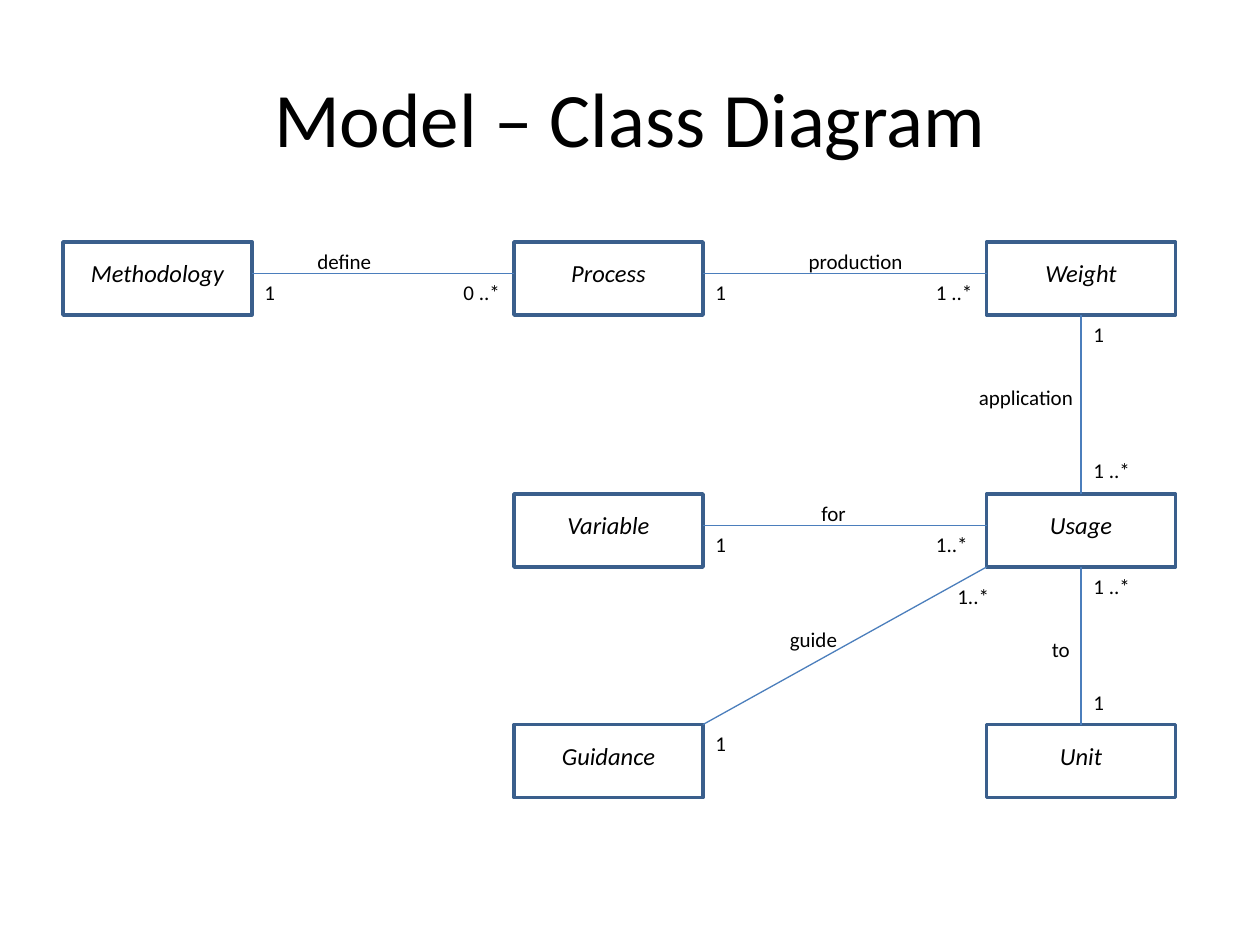
from lxml.etree import SubElement
from pptx import Presentation
from pptx.dml.color import RGBColor
from pptx.enum.shapes import MSO_CONNECTOR as Connector, MSO_SHAPE as Shape
from pptx.enum.text import MSO_ANCHOR as Anchor, MSO_AUTO_SIZE as AutoSize, PP_ALIGN as Align
from pptx.oxml.ns import qn
from pptx.util import Inches, Pt

BLACK = RGBColor(0x00, 0x00, 0x00)
BORDER = RGBColor(0x3A, 0x5F, 0x8C)
LINK = RGBColor(0x4B, 0x7E, 0xBC)

TITLE = "Model – Class Diagram"
COLUMNS = (0.5, 4.08, 7.83)
ROWS = (1.92, 3.92, 5.75)
BOX_WIDTH, BOX_HEIGHT = 1.5, 0.58
NAME_OFFSET, LINK_OFFSET = 0.08, 0.25

CLASSES = {
    "Methodology": (0, 0),
    "Process": (1, 0),
    "Weight": (2, 0),
    "Variable": (1, 1),
    "Usage": (2, 1),
    "Guidance": (1, 2),
    "Unit": (2, 2),
}
ASSOCIATIONS = [
    ("Methodology", "right", "Process", "left"),
    ("Process", "right", "Weight", "left"),
    ("Weight", "bottom", "Usage", "top"),
    ("Variable", "right", "Usage", "left"),
    ("Usage", "bottom", "Unit", "top"),
    ("Guidance", "top right", "Usage", "bottom left"),
]
ANCHORS = {
    "left": (0, LINK_OFFSET),
    "right": (BOX_WIDTH, LINK_OFFSET),
    "top": (BOX_WIDTH / 2, 0),
    "bottom": (BOX_WIDTH / 2, BOX_HEIGHT),
    "top right": (BOX_WIDTH, 0),
    "bottom left": (0, BOX_HEIGHT),
}
LABELS = [
    ("define", 2.42, 1.92, 0.63),
    ("1", 2, 2.17, 0.33),
    ("0 ..*", 3.58, 2.17, 0.5),
    ("production", 6.32, 1.92, 0.96),
    ("1", 5.58, 2.17, 0.33),
    ("1 ..*", 7.33, 2.17, 0.5),
    ("application", 7.67, 3, 0.97),
    ("1", 8.58, 2.5, 0.33),
    ("1 ..*", 8.58, 3.58, 0.5),
    ("for", 6.42, 3.92, 0.42),
    ("1", 5.58, 4.17, 0.33),
    ("1..*", 7.33, 4.17, 0.5),
    ("to", 8.25, 5, 0.42),
    ("1 ..*", 8.58, 4.5, 0.5),
    ("1", 8.58, 5.42, 0.33),
    ("guide", 6.17, 4.92, 0.58),
    ("1", 5.58, 5.75, 0.33),
    ("1..*", 7.5, 4.58, 0.5),
]

TITLE_FONT = {"name": "Calibri", "size": Pt(44)}
CLASS_FONT = {"name": "Calibri", "size": Pt(14), "italic": True}
LABEL_FONT = {"name": "Calibri", "size": Pt(12)}


def add_text(slide, text, left, top, width, height, font, align=Align.LEFT,
             anchor=Anchor.TOP, auto_size=AutoSize.SHAPE_TO_FIT_TEXT):
    box = slide.shapes.add_textbox(*map(Inches, (left, top, width, height)))
    frame = box.text_frame
    frame.word_wrap = True
    frame.auto_size = auto_size
    frame.vertical_anchor = anchor
    paragraph = frame.paragraphs[0]
    paragraph.alignment = align
    run = paragraph.add_run()
    run.text = text
    for name, value in font.items():
        setattr(run.font, name, value)
    run.font.color.rgb = BLACK


def add_class(slide, name, column, row):
    left, top = COLUMNS[column], ROWS[row]
    shape = slide.shapes.add_shape(
        Shape.RECTANGLE, *map(Inches, (left, top, BOX_WIDTH, BOX_HEIGHT)))
    shape.shadow.inherit = False
    shape.fill.background()
    shape.line.color.rgb = BORDER
    shape.line.width = Pt(2)
    add_text(slide, name, left, top + NAME_OFFSET, BOX_WIDTH, 0.34, CLASS_FONT, Align.CENTER)


def anchor_point(name, side):
    column, row = CLASSES[name]
    across, down = ANCHORS[side]
    return Inches(COLUMNS[column] + across), Inches(ROWS[row] + down)


def add_association(slide, source, source_side, target, target_side):
    connector = slide.shapes.add_connector(
        Connector.STRAIGHT, *anchor_point(source, source_side), *anchor_point(target, target_side))
    connector.line.color.rgb = LINK
    connector.line.width = Pt(0.75)
    SubElement(connector._element.spPr, qn("a:effectLst"))


def main():
    presentation = Presentation()
    presentation.slide_width = Inches(10)
    presentation.slide_height = Inches(7.5)
    slide = presentation.slides.add_slide(presentation.slide_layouts[6])
    add_text(slide, TITLE, 0.5, 0.3, 9, 1.25, TITLE_FONT, Align.CENTER,
             Anchor.MIDDLE, AutoSize.NONE)
    for name, (column, row) in CLASSES.items():
        add_class(slide, name, column, row)
    for association in ASSOCIATIONS:
        add_association(slide, *association)
    for text, left, top, width in LABELS:
        add_text(slide, text, left, top, width, 0.3, LABEL_FONT)
    presentation.save("out.pptx")


if __name__ == "__main__":
    main()
